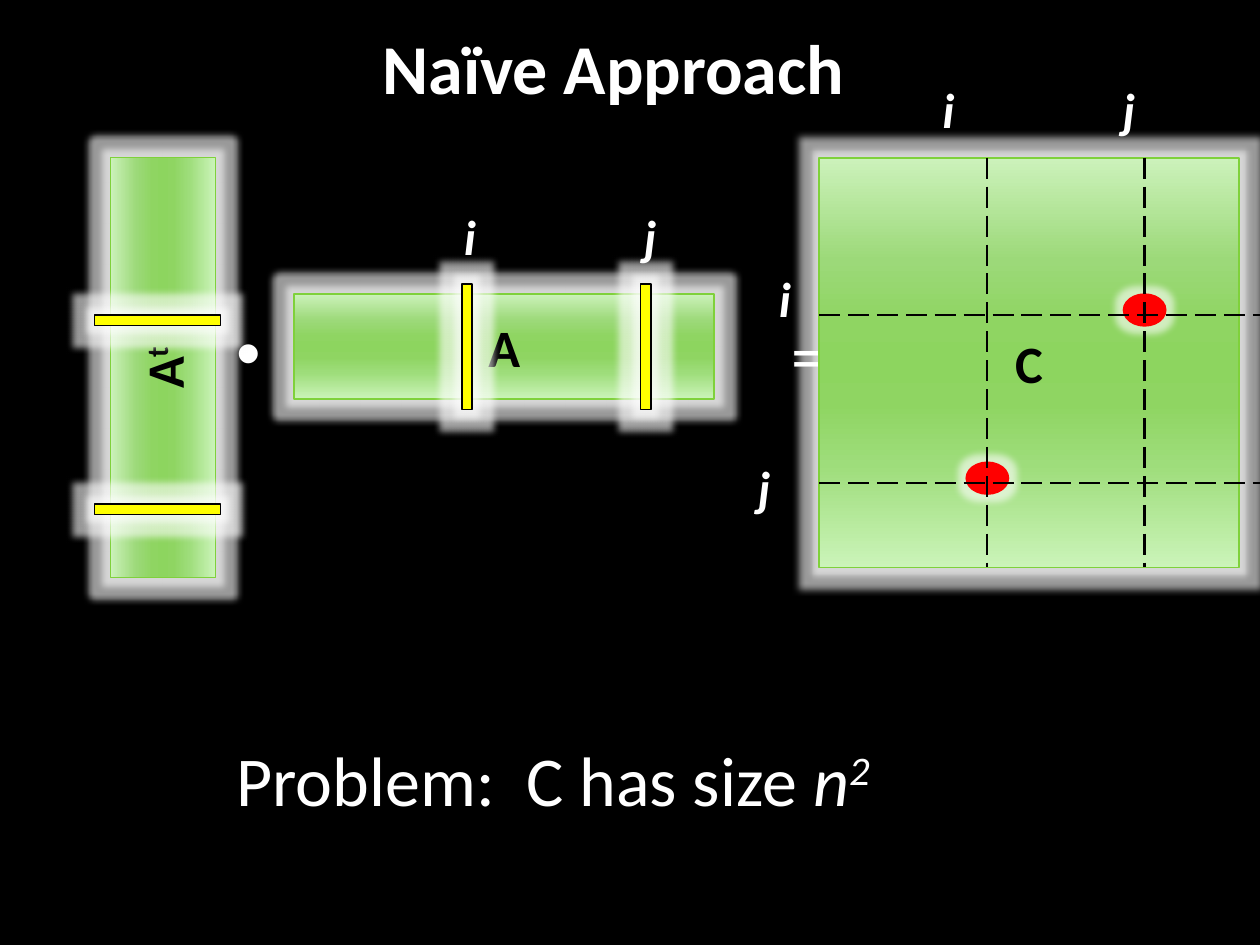
from lxml import etree
from pptx import Presentation
from pptx import util as u
from pptx.dml.color import RGBColor
from pptx.enum import dml, shapes, text
from pptx.oxml.ns import qn

BLACK = RGBColor(0, 0, 0)
WHITE = RGBColor(255, 255, 255)
YELLOW = RGBColor(255, 255, 0)
RED = RGBColor(255, 0, 0)
GREEN = RGBColor(0x7F, 0xD1, 0x3B)
MATRIX_STOPS = {0: "CCF2BB", 25: "9CD979", 40: "8FD562", 50: "8DD55F",
                60: "8FD562", 75: "9EDD7B", 100: "CBF4B9"}

RECT, OVAL = shapes.MSO_SHAPE.RECTANGLE, shapes.MSO_SHAPE.OVAL
HEADING = dict(size=u.Pt(40), bold=True)
BODY = dict(size=u.Pt(40))
MATRIX_NAME = dict(size=u.Pt(30), bold=True)
INDEX = dict(size=u.Pt(28), bold=True, italic=True)

# Matrix C and its index lines, in cm
C_LEFT, C_TOP, C_WIDTH, C_HEIGHT = 16.51, 3.18, 8.47, 8.26
C_COLUMNS = {"i": 19.9, "j": 23.07}
C_ROWS = {"i": 6.35, "j": 9.74}


def cm(*lengths):
    return [u.Cm(length) for length in lengths]


def add_run(paragraph, words, color, style, raised=False):
    run = paragraph.add_run()
    run.text = words
    run.font.name = "Calibri"
    run.font.color.rgb = color
    for name, value in style.items():
        setattr(run.font, name, value)
    if raised:
        run.font._element.set("baseline", "30000")


def add_glowing_shape(slide, kind, place, fill, line, rotation=0):
    shape = slide.shapes.add_shape(kind, *cm(*place))
    shape.rotation = rotation
    shape.shadow.inherit = False
    glow = etree.SubElement(shape._element.spPr.find(qn("a:effectLst")),
                            qn("a:glow"), rad="101600")
    tint = etree.SubElement(glow, qn("a:srgbClr"), val="FFFFFF")
    etree.SubElement(tint, qn("a:alpha"), val="60000")
    if fill is not None:
        shape.fill.solid()
        shape.fill.fore_color.rgb = fill
    shape.line.color.rgb = line
    shape.line.width = u.Pt(0.94)
    return shape


def add_matrix(slide, place, name, superscript="", rotation=0):
    matrix = add_glowing_shape(slide, RECT, place, None, GREEN, rotation)
    matrix.fill.gradient()
    matrix.fill.gradient_angle = 270
    stops = matrix._element.spPr.find(".//" + qn("a:gsLst"))
    stops.clear()
    for percent, color in MATRIX_STOPS.items():
        stop = etree.SubElement(stops, qn("a:gs"), pos=str(percent * 1000))
        etree.SubElement(stop, qn("a:srgbClr"), val=color)
    matrix.text_frame.vertical_anchor = text.MSO_ANCHOR.MIDDLE
    label = matrix.text_frame.paragraphs[0]
    label.alignment = text.PP_ALIGN.CENTER
    add_run(label, name, BLACK, MATRIX_NAME)
    if superscript:
        add_run(label, superscript, BLACK, MATRIX_NAME, raised=True)


def add_bar(slide, left, top, rotation=0):
    add_glowing_shape(slide, RECT, (left, top, 0.21, 2.54), YELLOW, BLACK, rotation)


def add_entry(slide, column, row):
    """Red dot where a column line meets a row line."""
    place = (C_COLUMNS[column] - 0.42, C_ROWS[row] - 0.42, 0.85, 0.64)
    add_glowing_shape(slide, OVAL, place, RED, RED)


def add_text_box(slide, place):
    frame = slide.shapes.add_textbox(*cm(*place)).text_frame
    frame.word_wrap = True
    return frame


def add_index(slide, letter, left, top):
    frame = add_text_box(slide, (left, top, 1.07, 1.45))
    add_run(frame.paragraphs[0], letter, WHITE, INDEX)


def add_dashed_line(slide, *ends):
    line = slide.shapes.add_connector(shapes.MSO_CONNECTOR.STRAIGHT, *cm(*ends))
    line.line.color.rgb = BLACK
    line.line.width = u.Pt(1.5)
    line.line.dash_style = dml.MSO_LINE.LONG_DASH
    etree.SubElement(line._element.spPr, qn("a:effectLst"))


def add_title(slide):
    title = slide.shapes.title
    title.left, title.top, title.width, title.height = cm(0.2, 0.36, 24.33, 1.96)
    title.text_frame.vertical_anchor = text.MSO_ANCHOR.TOP
    heading = title.text_frame.paragraphs[0]
    heading.alignment = text.PP_ALIGN.CENTER
    add_run(heading, "Naïve Approach", WHITE, HEADING)


def add_equation_text(slide):
    """Product dot and equals sign, with the problem statement below."""
    frame = add_text_box(slide, (4.52, 6.15, 13.64, 10.52))
    equation = frame.paragraphs[0]
    add_run(equation, "=", WHITE, BODY)
    # The hanging indent spans matrix A
    indent = u.Cm(11.18)
    properties = equation._p.get_or_add_pPr()
    properties.set("marL", str(indent))
    properties.set("indent", str(-indent))
    etree.SubElement(properties, qn("a:buFont"), typeface="Arial")
    etree.SubElement(properties, qn("a:buChar"), char="•")

    problem = frame.add_paragraph()
    problem.space_before = u.Pt(195)
    add_run(problem, "Problem:  C has size ", WHITE, BODY)
    add_run(problem, "n", WHITE, dict(BODY, italic=True))
    add_run(problem, "2", WHITE, dict(BODY, italic=True), raised=True)


def main():
    deck = Presentation()
    deck.slide_width, deck.slide_height = cm(25.4, 19.05)
    slide = deck.slides.add_slide(deck.slide_layouts[5])
    slide.background.fill.solid()
    slide.background.fill.fore_color.rgb = BLACK
    add_title(slide)

    # Matrices; C covers the end of the equals sign
    add_matrix(slide, (5.93, 5.93, 8.47, 2.12), "A")
    add_equation_text(slide)
    add_matrix(slide, (C_LEFT, C_TOP, C_WIDTH, C_HEIGHT), "C")
    add_matrix(slide, (-0.95, 6.35, 8.47, 2.12), "A", "t", rotation=270)

    # Columns of A and the matching rows of its transpose
    for left in (9.31, 12.91):
        add_bar(slide, left, 5.72)
    for top in (5.19, 9.0):
        add_bar(slide, 3.07, top, rotation=270)

    # Symmetric entries of C and the lines through them
    add_entry(slide, "j", "i")
    add_entry(slide, "i", "j")
    for x in C_COLUMNS.values():
        add_dashed_line(slide, x, C_TOP, x, C_TOP + C_HEIGHT)
    for y in C_ROWS.values():
        add_dashed_line(slide, C_LEFT, y, 25.4, y)

    # Index letters: above C, left of C, above A
    for letter, left, top in (("i", 18.75, 1.48), ("j", 22.38, 1.48),
                              ("i", 15.45, 5.29), ("j", 15.03, 9.1),
                              ("i", 9.1, 4.04), ("j", 12.73, 4.04)):
        add_index(slide, letter, left, top)

    deck.save("out.pptx")


if __name__ == "__main__":
    main()
